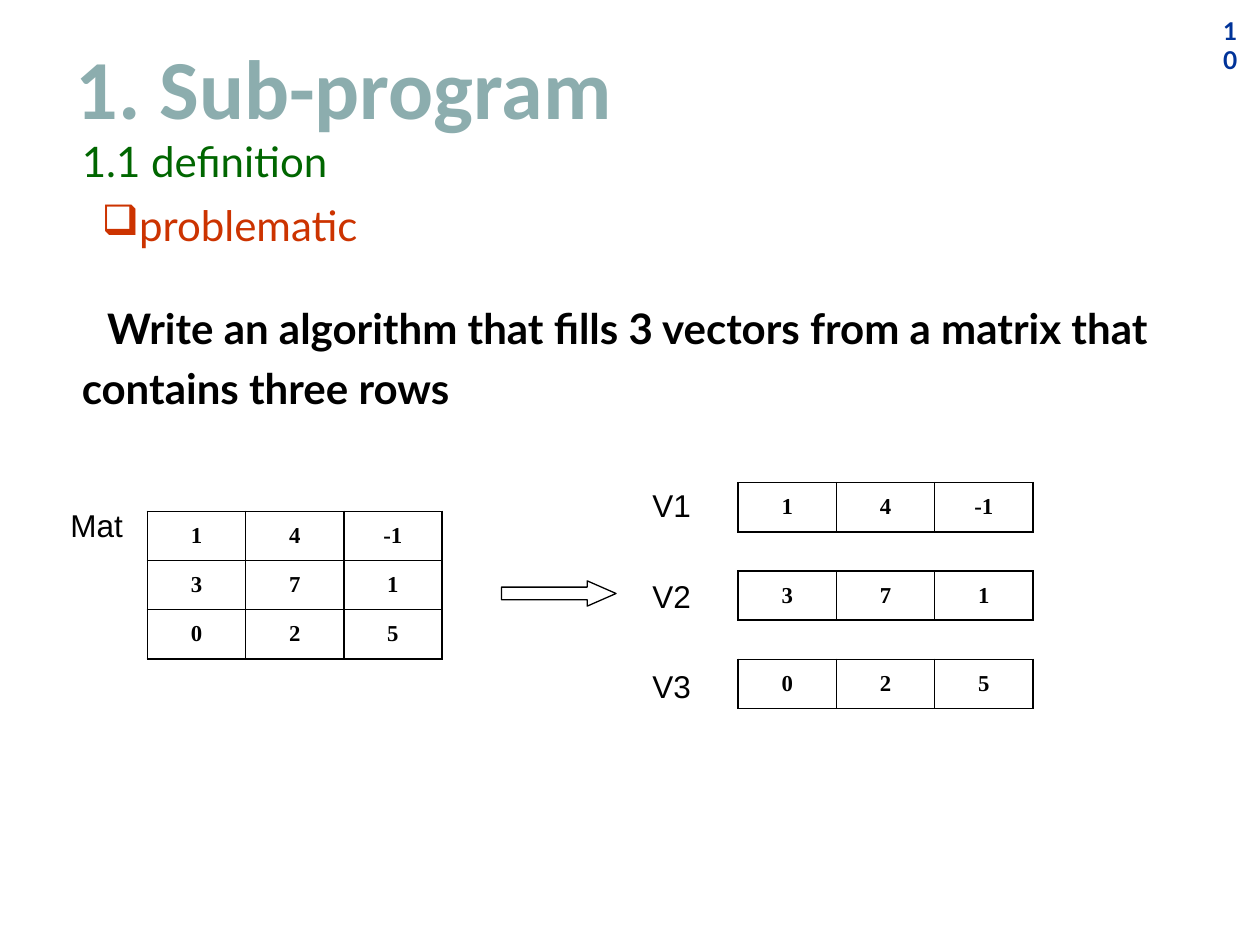
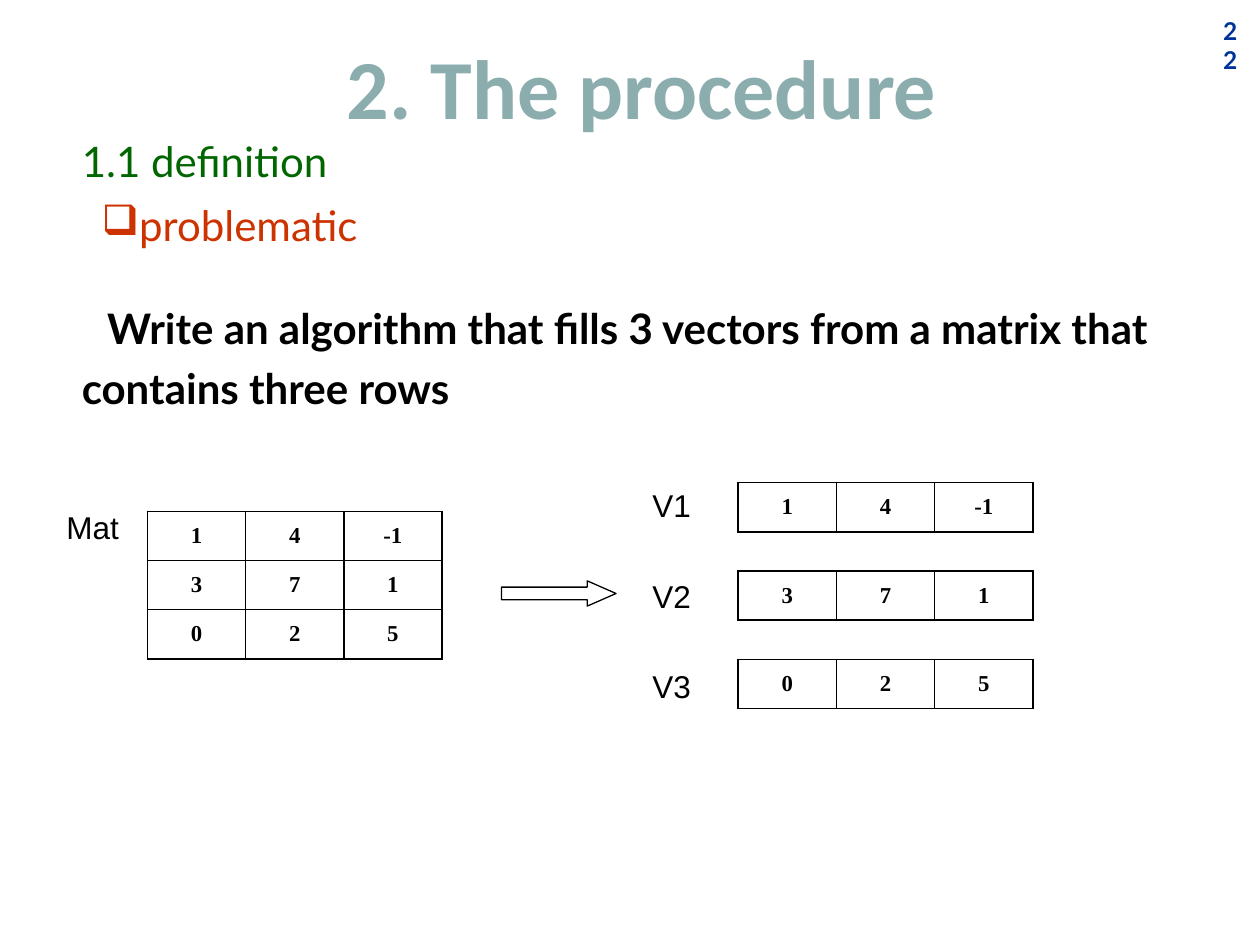
from dataclasses import dataclass
from typing import Optional

from lxml.etree import SubElement
from pptx import Presentation
from pptx.dml.color import RGBColor
from pptx.enum.shapes import MSO_SHAPE
from pptx.enum.text import MSO_ANCHOR, MSO_AUTO_SIZE, PP_ALIGN
from pptx.oxml.ns import qn
from pptx.slide import Slide
from pptx.text.text import TextFrame
from pptx.util import Cm, Pt

COLORS = {
    "title": "8CADAE",
    "page": "003399",
    "section": "006600",
    "topic": "CC3300",
    "ink": "000000",
    "paper": "FFFFFF",
}
CELL_WIDTH = 1.98
CELL_HEIGHT = 0.99
MATRIX = (("1", "4", "-1"), ("3", "7", "1"), ("0", "2", "5"))
VECTOR_LEFT, VECTOR_TOP, VECTOR_PITCH = 14.88, 9.73, 1.78
LABEL_LEFT, LABEL_TOP, LABEL_PITCH = 12.9, 9.68, 1.82


@dataclass(frozen=True)
class Box:
    left: float
    top: float
    width: float
    height: float

    def lengths(self) -> tuple:
        return Cm(self.left), Cm(self.top), Cm(self.width), Cm(self.height)


@dataclass(frozen=True)
class Lesson:
    title: str
    alignment: PP_ALIGN
    page: str
    matrix_label: Box


TITLE_BOX = Box(1.27, 0.58, 23.34, 2.31)
PAGE_BOX = Box(24.41, 0.48, 0.81, 0.86)
SECTION_BOX = Box(1.4, 2.59, 23.34, 1.3)
TOPIC_BOX = Box(1.8, 3.89, 23.34, 1.3)
TASK_BOX = Box(1.4, 5.77, 23.34, 2.72)
ARROW_BOX = Box(10.11, 11.71, 2.31, 0.51)

LESSONS = (
    Lesson("1. Sub-program", PP_ALIGN.LEFT, "10", Box(1.17, 10.08, 1.78, 1.02)),
    Lesson("2. The procedure", PP_ALIGN.CENTER, "22", Box(1.09, 10.11, 1.78, 1.02)),
)


def write_text(
    frame: TextFrame,
    text: str,
    *,
    size: float,
    font: str,
    color: str = "ink",
    bold: bool = False,
    alignment: PP_ALIGN = PP_ALIGN.LEFT,
    bullet: Optional[str] = None,
    first_indent: float = 0,
    line_spacing: float = 1.0,
) -> None:
    paragraph = frame.paragraphs[0]
    paragraph.alignment = alignment
    paragraph.line_spacing = line_spacing
    properties = paragraph._p.get_or_add_pPr()
    properties.set("marL", "0")
    properties.set("indent", str(Cm(first_indent)))
    if bullet:
        SubElement(properties, qn("a:buChar")).set("char", bullet)
    run = paragraph.add_run()
    run.text = text
    run.font.size = Pt(size)
    run.font.name = font
    run.font.bold = bold
    run.font.color.rgb = RGBColor.from_string(COLORS[color])


def add_text(
    slide: Slide, box: Box, text: str, anchor: MSO_ANCHOR = MSO_ANCHOR.MIDDLE, **text_format
) -> None:
    frame = slide.shapes.add_textbox(*box.lengths()).text_frame
    frame.word_wrap = True
    frame.vertical_anchor = anchor
    write_text(frame, text, **text_format)


def add_title(slide: Slide, lesson: Lesson) -> None:
    title = slide.shapes.title
    title.left, title.top, title.width, title.height = TITLE_BOX.lengths()
    frame = title.text_frame
    frame.auto_size = MSO_AUTO_SIZE.NONE
    frame.vertical_anchor = MSO_ANCHOR.MIDDLE
    write_text(
        frame, lesson.title, size=48, font="Calibri", color="title", bold=True,
        alignment=lesson.alignment,
    )


def format_cell(cell, value: str) -> None:
    cell.margin_left = cell.margin_right = Cm(0.18)
    cell.margin_top = cell.margin_bottom = 0
    cell.vertical_anchor = MSO_ANCHOR.MIDDLE
    properties = cell._tc.get_or_add_tcPr()
    for side in ("a:lnL", "a:lnR", "a:lnT", "a:lnB"):
        border = SubElement(properties, qn(side), w=str(Pt(1)))
        fill = SubElement(border, qn("a:solidFill"))
        SubElement(fill, qn("a:srgbClr")).set("val", COLORS["ink"])
    cell.fill.background()
    write_text(
        cell.text_frame, value, size=13, font="Times New Roman", bold=True,
        alignment=PP_ALIGN.CENTER,
    )


def add_grid(slide: Slide, left: float, top: float, rows: tuple) -> None:
    columns = len(rows[0])
    box = Box(left, top, columns * CELL_WIDTH, len(rows) * CELL_HEIGHT)
    table = slide.shapes.add_table(len(rows), columns, *box.lengths()).table
    table.first_row = False
    table.horz_banding = False
    for row_index, row in enumerate(rows):
        for column_index, value in enumerate(row):
            format_cell(table.cell(row_index, column_index), value)


def add_label(slide: Slide, box: Box, text: str) -> None:
    add_text(slide, box, text, anchor=MSO_ANCHOR.TOP, size=18, font="Arial")


def add_arrow(slide: Slide) -> None:
    arrow = slide.shapes.add_shape(MSO_SHAPE.RIGHT_ARROW, *ARROW_BOX.lengths())
    arrow.adjustments[0] = 0.5
    arrow.adjustments[1] = 1.14
    arrow.shadow.inherit = False
    arrow.fill.solid()
    arrow.fill.fore_color.rgb = RGBColor.from_string(COLORS["paper"])
    arrow.line.color.rgb = RGBColor.from_string(COLORS["ink"])
    arrow.line.width = Pt(0.75)


def add_lesson(presentation, lesson: Lesson) -> None:
    slide = presentation.slides.add_slide(presentation.slide_layouts[5])
    add_title(slide, lesson)
    add_text(slide, PAGE_BOX, lesson.page, size=14, font="Lato", color="page", bold=True)
    add_text(slide, SECTION_BOX, "1.1 definition", size=24, font="Lato", color="section")
    add_text(slide, TOPIC_BOX, "problematic", size=24, font="Lato", color="topic", bullet="❑")
    add_text(
        slide, TASK_BOX,
        "Write an algorithm that fills 3 vectors from a matrix that contains three rows",
        anchor=MSO_ANCHOR.TOP, size=24, font="Lato", bold=True,
        first_indent=0.51, line_spacing=1.2,
    )
    add_grid(slide, 2.97, 10.31, MATRIX)
    add_label(slide, lesson.matrix_label, "Mat")
    add_arrow(slide)
    for index, row in enumerate(MATRIX):
        add_grid(slide, VECTOR_LEFT, VECTOR_TOP + index * VECTOR_PITCH, (row,))
        label_box = Box(LABEL_LEFT, LABEL_TOP + index * LABEL_PITCH, 1.78, 1.02)
        add_label(slide, label_box, f"V{index + 1}")


def main() -> None:
    presentation = Presentation()
    presentation.slide_width = Cm(25.4)
    presentation.slide_height = Cm(19.05)
    for lesson in LESSONS:
        add_lesson(presentation, lesson)
    presentation.save("out.pptx")


if __name__ == "__main__":
    main()
